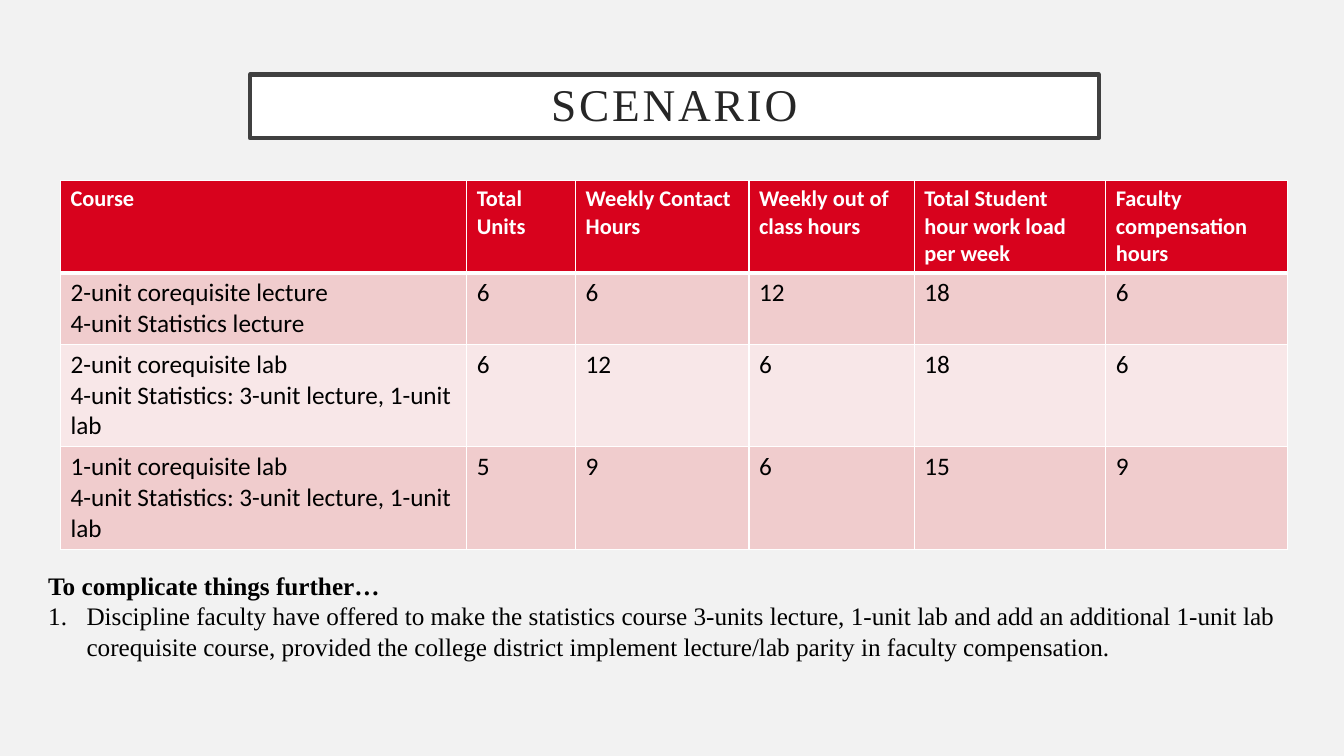
from lxml import etree
from pptx import Presentation
from pptx import util as u
from pptx.dml.color import RGBColor
from pptx.enum import shapes, text
from pptx.oxml import ns

COLORS = {
    "page": "F2F2F2", "white": "FFFFFF", "frame": "404040", "title": "262626",
    "black": "000000", "header": "D8021D", "odd": "F0CCCD", "even": "F8E7E8",
}
SERIF, SANS = "Times New Roman", "Calibri"

# Lengths are percentages of the slide's width and height
TITLE_AREA = (18.6, 9.87, 63.15, 8.4)
TABLE_ORIGIN = (4.5, 23.87)
COLUMN_WIDTHS = (30.23, 8.1, 12.9, 12.3, 14.25, 13.5)
ROW_HEIGHTS = (11.8, 9.33, 13.33, 13.33)
NOTES_AREA = (2.85, 74.8, 94.65, 17.47)

SPLIT_COURSE = "4-unit Statistics: 3-unit lecture, 1-unit lab"
COURSES = [
    ("Course", "Total Units", "Weekly Contact Hours", "Weekly out of class hours",
     "Total Student hour work load per week", "Faculty compensation hours"),
    ("2-unit corequisite lecture\n4-unit Statistics lecture", 6, 6, 12, 18, 6),
    ("2-unit corequisite lab\n" + SPLIT_COURSE, 6, 12, 6, 18, 6),
    ("1-unit corequisite lab\n" + SPLIT_COURSE, 5, 9, 6, 15, 9),
]
NOTES_HEADING = "To complicate things further…"
NOTES_ITEM = (
    "Discipline faculty have offered to make the statistics course 3-units lecture, "
    "1-unit lab and add an additional 1-unit lab corequisite course, provided the "
    "college district implement lecture/lab parity in faculty compensation."
)


def color(name):
    return RGBColor.from_string(COLORS[name])


class Page:
    """The current slide and its style."""

    def __init__(self, deck):
        self.width, self.height = deck.slide_width, deck.slide_height
        self.slide = deck.slides.add_slide(deck.slide_layouts[6])
        fill = self.slide.background.fill
        fill.solid()
        fill.fore_color.rgb = color("page")

    def across(self, share):
        return u.Emu(round(self.width * share / 100))

    def down(self, share):
        return u.Emu(round(self.height * share / 100))

    def place(self, left, top, width, height):
        return self.across(left), self.down(top), self.across(width), self.down(height)

    def style(self, para, font, size, ink, bold=False):
        para.font.name, para.font.size = font, u.Pt(size)
        para.font.bold, para.font.color.rgb = bold, color(ink)

    def title(self, wording, area):
        box = self.slide.shapes.add_shape(shapes.MSO_SHAPE.RECTANGLE, *self.place(*area))
        box.shadow.inherit = False
        box.fill.solid()
        box.fill.fore_color.rgb = color("white")
        box.line.color.rgb, box.line.width = color("frame"), u.Pt(3)
        frame = box.text_frame
        frame.word_wrap = True
        frame.vertical_anchor = text.MSO_ANCHOR.MIDDLE
        frame.margin_left = frame.margin_right = u.Inches(0.3)
        frame.margin_top = frame.margin_bottom = u.Inches(0.2)
        para = frame.paragraphs[0]
        para.alignment, para.line_spacing = text.PP_ALIGN.CENTER, 0.9
        span = para.add_run()
        span.text = wording
        self.style(para, SERIF, 32.4, "title")
        span.font.language_id = None
        span.font._element.set("spc", "200")

    def border(self, cell, side, points):
        line = etree.SubElement(cell._tc.get_or_add_tcPr(), ns.qn(f"a:ln{side}"),
                                w=str(u.Pt(points)))
        fill = etree.SubElement(line, ns.qn("a:solidFill"))
        etree.SubElement(fill, ns.qn("a:srgbClr"), val=COLORS["white"])

    def table(self, rows, origin, widths, heights):
        area = self.place(*origin, sum(widths), sum(heights))
        grid = self.slide.shapes.add_table(len(rows), len(widths), *area).table
        for column, width in zip(grid.columns, widths):
            column.width = self.across(width)
        for number, (row, height, values) in enumerate(zip(grid.rows, heights, rows)):
            row.height = self.down(height)
            band = "header" if number == 0 else "odd" if number % 2 else "even"
            for cell, value in zip(row.cells, values):
                self.cell(cell, str(value), band, number)

    def cell(self, cell, wording, band, number):
        heading = number == 0
        for side in "LRTB":
            thick = (heading and side == "B") or (number == 1 and side == "T")
            self.border(cell, side, 3 if thick else 1)
        cell.fill.solid()
        cell.fill.fore_color.rgb = color(band)
        cell.text_frame.text = wording
        for para in cell.text_frame.paragraphs:
            self.style(para, SANS, 16 if heading else 18,
                       "white" if heading else "black", heading)

    def notes(self, heading, items, area):
        frame = self.slide.shapes.add_textbox(*self.place(*area)).text_frame
        frame.word_wrap = True
        frame.text = "\n".join([heading, *items])
        for number, para in enumerate(frame.paragraphs):
            self.style(para, SERIF, 18, "black", bold=number == 0)
            if number:
                self.numbered(para)

    def numbered(self, para):
        props = para._p.get_or_add_pPr()
        indent = u.Inches(0.38)
        props.set("marL", str(indent))
        props.set("indent", str(-indent))
        bullet = etree.Element(ns.qn("a:buAutoNum"), type="arabicPeriod")
        props.insert(0, bullet)


def main():
    deck = Presentation()
    deck.slide_width, deck.slide_height = u.Inches(13.33), u.Inches(7.5)
    page = Page(deck)
    # Title
    page.title("SCENARIO", TITLE_AREA)
    # Course workload table
    page.table(COURSES, TABLE_ORIGIN, COLUMN_WIDTHS, ROW_HEIGHTS)
    # Remarks below the table
    page.notes(NOTES_HEADING, [NOTES_ITEM], NOTES_AREA)
    deck.save("out.pptx")


if __name__ == "__main__":
    main()
